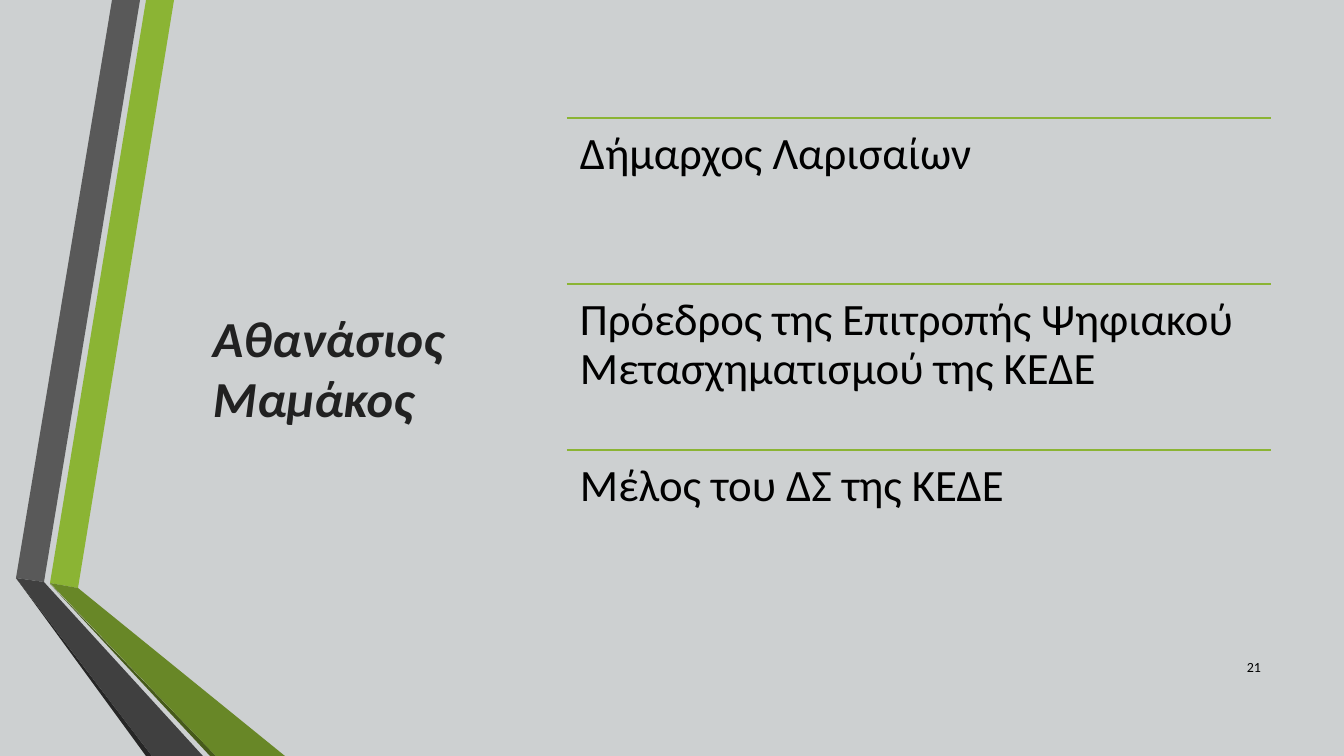
from dataclasses import dataclass

from lxml.etree import SubElement
from pptx import Presentation
from pptx.dml.color import RGBColor
from pptx.enum.shapes import MSO_CONNECTOR
from pptx.enum.text import MSO_ANCHOR, MSO_AUTO_SIZE, PP_ALIGN
from pptx.oxml.ns import qn
from pptx.util import Pt

NAME = "Αθανάσιος Μαμάκος"
ROLES = [
    "Δήμαρχος Λαρισαίων",
    "Πρόεδρος της Επιτροπής Ψηφιακού Μετασχηματισμού της ΚΕΔΕ",
    "Μέλος του ΔΣ της ΚΕΔΕ",
]
PAGE_NUMBER = "21"


@dataclass(frozen=True)
class Theme:
    font: str = "Calibri"
    background: str = "CDD0D1"
    accent: str = "8BB434"
    title: str = "212121"
    text: str = "000000"
    title_size: int = 36
    role_size: int = 32
    number_size: int = 10
    rule_width: float = 1.25


THEME = Theme()

# Ribbon faces from back to front: colour and corners in px
RIBBON_FACES = [
    (THEME.accent, [(50, 583), (78, 588), (174, 0), (146, 0)]),
    ("595959", [(140, 0), (112, 0), (16, 578), (44, 582)]),
    ("262626", [(16, 578), (146, 756), (152, 756)]),
    ("465A1A", [(50, 584), (210, 756), (216, 756)]),
    ("688727", [(50, 583), (216, 756), (285, 756), (78, 588)]),
    ("404040", [(203, 756), (44, 582), (16, 578), (152, 756)]),
]

PX = 914400 / 100.8
SLIDE_SIZE = (1344, 756)
TITLE_BOX = (203, 118, 336, 499)
NUMBER_BOX = (1211, 647, 60, 40)
ROLES_LEFT, ROLES_TOP, ROLES_WIDTH, ROLE_HEIGHT = 567, 118, 704, 166
ROLE_INSET, INSET_X, INSET_Y = 13, 10, 5


def emu(*lengths):
    return [round(length * PX) for length in lengths]


def write(shape, text, *, size, color=THEME.text, bold=False, italic=False,
          align=PP_ALIGN.LEFT, anchor=MSO_ANCHOR.TOP, spacing=1.0,
          insets=(INSET_X, INSET_Y)):
    frame = shape.text_frame
    frame.word_wrap = True
    frame.auto_size = MSO_AUTO_SIZE.NONE
    frame.vertical_anchor = anchor
    inset_x, inset_y = emu(*insets)
    frame.margin_left = frame.margin_right = inset_x
    frame.margin_top = frame.margin_bottom = inset_y
    paragraph = frame.paragraphs[0]
    paragraph.alignment = align
    paragraph.line_spacing = spacing
    run = paragraph.add_run()
    run.text = text
    font = run.font
    font.name, font.size = THEME.font, Pt(size)
    font.bold, font.italic = bold, italic
    font.color.rgb = RGBColor.from_string(color)


def add_face(shapes, color, corners):
    start, *others = corners
    builder = shapes.build_freeform(*start, scale=PX)
    builder.add_line_segments(others, close=True)
    face = builder.convert_to_shape()
    face.shadow.inherit = False
    face.fill.solid()
    face.fill.fore_color.rgb = RGBColor.from_string(color)
    face.line.fill.background()


def add_rule(shapes, left, top, width):
    rule = shapes.add_connector(
        MSO_CONNECTOR.STRAIGHT, *emu(left, top, left + width, top))
    rule.line.color.rgb = RGBColor.from_string(THEME.accent)
    rule.line.width = Pt(THEME.rule_width)
    SubElement(rule._element.spPr, qn("a:effectLst"))


def main():
    deck = Presentation()
    deck.slide_width, deck.slide_height = emu(*SLIDE_SIZE)
    slide = deck.slides.add_slide(deck.slide_layouts[5])
    slide.background.fill.solid()
    slide.background.fill.fore_color.rgb = RGBColor.from_string(THEME.background)
    shapes = slide.shapes

    for color, corners in RIBBON_FACES:
        add_face(shapes, color, corners)

    title = shapes.title
    title.left, title.top, title.width, title.height = emu(*TITLE_BOX)
    write(title, NAME, size=THEME.title_size, color=THEME.title,
          bold=True, italic=True, anchor=MSO_ANCHOR.MIDDLE)

    for index, role in enumerate(ROLES):
        top = ROLES_TOP + index * ROLE_HEIGHT
        add_rule(shapes, ROLES_LEFT, top, ROLES_WIDTH)
        role_box = shapes.add_textbox(
            *emu(ROLES_LEFT, top, ROLES_WIDTH, ROLE_HEIGHT))
        write(role_box, role, size=THEME.role_size, spacing=0.9,
              insets=(ROLE_INSET, ROLE_INSET))

    number_box = shapes.add_textbox(*emu(*NUMBER_BOX))
    write(number_box, PAGE_NUMBER, size=THEME.number_size,
          align=PP_ALIGN.RIGHT, anchor=MSO_ANCHOR.MIDDLE)

    deck.save("out.pptx")


if __name__ == "__main__":
    main()
